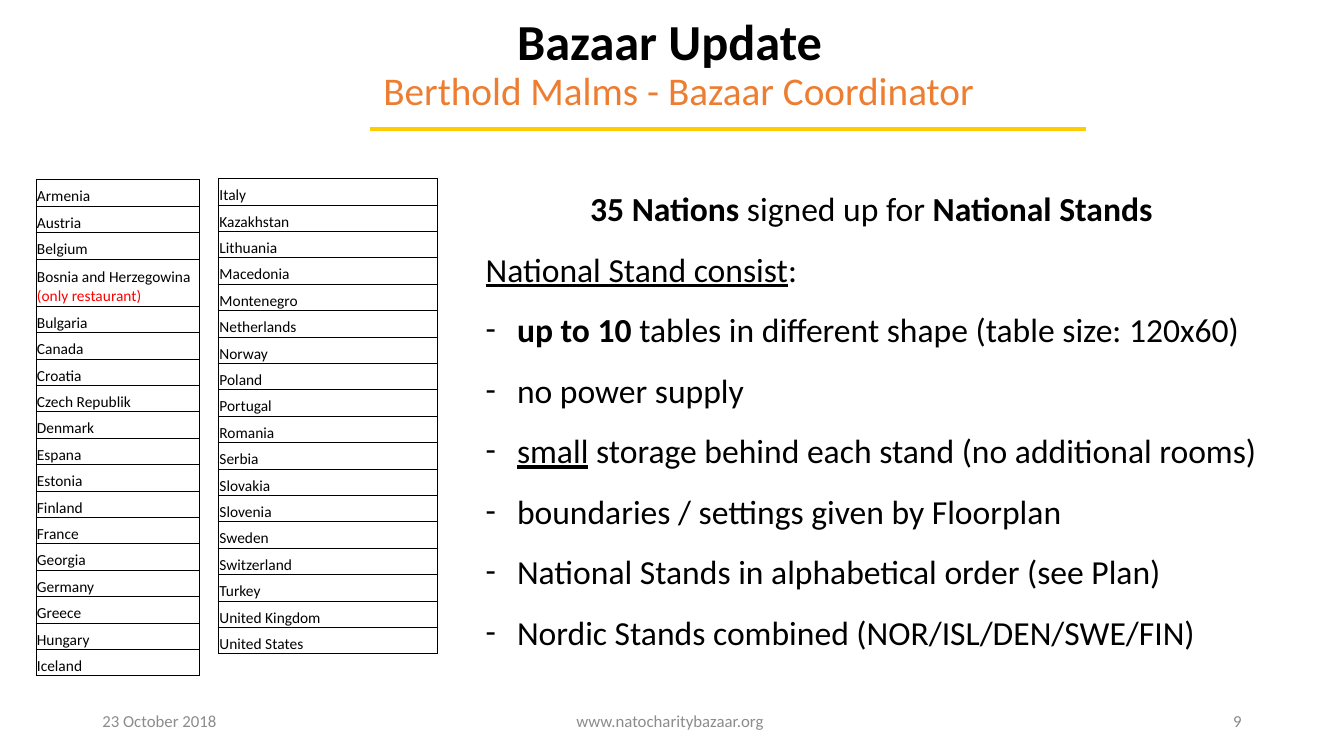
"""Build the Bazaar Update slide with its nations tables and stand rules."""
from lxml import etree
from pptx import Presentation
from pptx.dml.color import RGBColor
from pptx.enum.shapes import MSO_CONNECTOR
from pptx.enum.text import MSO_ANCHOR, MSO_AUTO_SIZE, PP_ALIGN
from pptx.oxml.ns import qn
from pptx.util import Cm, Pt

LEFT, CENTER, RIGHT = PP_ALIGN.LEFT, PP_ALIGN.CENTER, PP_ALIGN.RIGHT
TOP, MIDDLE, BOTTOM = MSO_ANCHOR.TOP, MSO_ANCHOR.MIDDLE, MSO_ANCHOR.BOTTOM
GROW = MSO_AUTO_SIZE.SHAPE_TO_FIT_TEXT
STRAIGHT = MSO_CONNECTOR.STRAIGHT

BLACK = RGBColor(0, 0, 0)
WHITE = RGBColor(255, 255, 255)
RED = RGBColor(255, 0, 0)
ORANGE = RGBColor(0xED, 0x7D, 0x31)
GOLD = RGBColor(0xFF, 0xCC, 0)
GRAY = RGBColor(0x8C, 0x8C, 0x8C)
NUMBER_GRAY = RGBColor(0x89, 0x89, 0x89)
FONT = "Calibri"

TITLE = "Bazaar Update "
SUBTITLE = "Berthold Malms - Bazaar Coordinator"

BODY = [
    (CENTER, False, [("35 Nations ", "b"), ("signed up for ", ""), ("National Stands", "b")]),
    (LEFT, False, [("National Stand consist", "u"), (":", "")]),
    (LEFT, True, [("up to 10 ", "b"), ("tables in different shape (table size: 120x60)", "")]),
    (LEFT, True, [("no power supply", "")]),
    (LEFT, True, [("small", "u"), (" storage behind each stand (no additional rooms)", "")]),
    (LEFT, True, [("boundaries / settings given by Floorplan", "")]),
    (LEFT, True, [("National Stands in alphabetical order (see Plan)", "")]),
    (LEFT, True, [("Nordic Stands combined (NOR/ISL/DEN/SWE/FIN)", "")]),
]

NOTES = {"Bosnia and Herzegowina": "(only restaurant)"}
WHITE_CELLS = {"Czech Republik"}
TABLES = [
    (0.91, 4.53, 4.12, [
        "Armenia", "Austria", "Belgium", "Bosnia and Herzegowina", "Bulgaria", "Canada",
        "Croatia", "Czech Republik", "Denmark", "Espana", "Estonia", "Finland", "France",
        "Georgia", "Germany", "Greece", "Hungary", "Iceland"]),
    (5.51, 4.5, 5.51, [
        "Italy", "Kazakhstan", "Lithuania", "Macedonia", "Montenegro", "Netherlands",
        "Norway", "Poland", "Portugal", "Romania", "Serbia", "Slovakia", "Slovenia",
        "Sweden", "Switzerland", "Turkey", "United Kingdom", "United States"]),
]
ROW_H, NOTE_ROW_H = 0.665, 1.19
BORDERS = [("lnL", 1), ("lnR", 1), ("lnT", 0.5), ("lnB", 0.5)]

FOOTER = [
    (2.33, 7.62, LEFT, "23 October 2018", GRAY),
    (11.22, 11.43, CENTER, "www.natocharitybazaar.org ", GRAY),
    (23.92, 7.62, RIGHT, "9", NUMBER_GRAY),
]
FOOTER_TOP, FOOTER_H = 17.65, 1.01


def add_run(p, text, size, color, style=""):
    r = p.add_run()
    r.text = text
    r.font.name, r.font.size = FONT, Pt(size)
    r.font.color.rgb = color
    r.font.bold = "b" in style
    r.font.underline = "u" in style


def add_box(s, left, top, width, height, anchor):
    tf = s.shapes.add_textbox(Cm(left), Cm(top), Cm(width), Cm(height)).text_frame
    tf.word_wrap = True
    tf.vertical_anchor = anchor
    return tf


def add_title(s):
    p = add_box(s, 4.32, 0.58, 25.4, 2.41, BOTTOM).paragraphs[0]
    p.alignment, p.line_spacing = CENTER, 0.9
    add_run(p, TITLE, 36, BLACK, "b")
    p.add_line_break()
    add_run(p, " ", 20, ORANGE, "b")
    add_run(p, SUBTITLE, 28, ORANGE)
    rule = s.shapes.add_connector(STRAIGHT, Cm(9.32), Cm(3.25), Cm(27.36), Cm(3.25))
    rule.line.color.rgb, rule.line.width = GOLD, Pt(3)
    etree.SubElement(rule._element.spPr, qn("a:effectLst"))


def add_body(s):
    tf = add_box(s, 11.99, 4.11, 19.94, 12.57, TOP)
    tf.auto_size = GROW
    for i, (align, bullet, runs) in enumerate(BODY):
        p = tf.add_paragraph() if i else tf.paragraphs[0]
        p.alignment, p.line_spacing = align, 1.5
        pPr = p._p.get_or_add_pPr()
        pPr.set("marL", str(Cm(0.79)))
        pPr.set("indent", str(-Cm(0.79)))
        if bullet:
            etree.SubElement(pPr, qn("a:buFont"), typeface=FONT)
            etree.SubElement(pPr, qn("a:buChar"), char="-")
        for text, style in runs:
            add_run(p, text, 24, BLACK, style)


def add_borders(cell):
    tcPr = cell._tc.get_or_add_tcPr()
    for tag, width in BORDERS:
        ln = etree.SubElement(tcPr, qn("a:" + tag), w=str(Pt(width)))
        fill = etree.SubElement(ln, qn("a:solidFill"))
        etree.SubElement(fill, qn("a:srgbClr"), val=str(BLACK))


def add_nations(s, left, top, width, nations):
    heights = [NOTE_ROW_H if n in NOTES else ROW_H for n in nations]
    table = s.shapes.add_table(len(nations), 1, Cm(left), Cm(top),
                               Cm(width), Cm(sum(heights))).table
    table.first_row = table.horz_banding = False
    for i, (nation, height) in enumerate(zip(nations, heights)):
        table.rows[i].height = Cm(height)
        cell = table.cell(i, 0)
        cell.margin_left = cell.margin_right = cell.margin_top = Cm(0.02)
        cell.margin_bottom = 0
        cell.vertical_anchor = BOTTOM
        add_borders(cell)
        if nation in WHITE_CELLS:
            cell.fill.solid()
            cell.fill.fore_color.rgb = WHITE
        else:
            cell.fill.background()
        add_run(cell.text_frame.paragraphs[0], nation, 11, BLACK)
        if nation in NOTES:
            add_run(cell.text_frame.add_paragraph(), NOTES[nation], 11, RED)


def main():
    prs = Presentation()
    prs.slide_width, prs.slide_height = Cm(33.87), Cm(19.05)
    s = prs.slides.add_slide(prs.slide_layouts[6])
    add_title(s)
    add_body(s)
    for left, width, align, text, color in FOOTER:
        p = add_box(s, left, FOOTER_TOP, width, FOOTER_H, MIDDLE).paragraphs[0]
        p.alignment = align
        add_run(p, text, 12, color)
    for left, top, width, nations in TABLES:
        add_nations(s, left, top, width, nations)
    prs.save("out.pptx")


if __name__ == "__main__":
    main()
